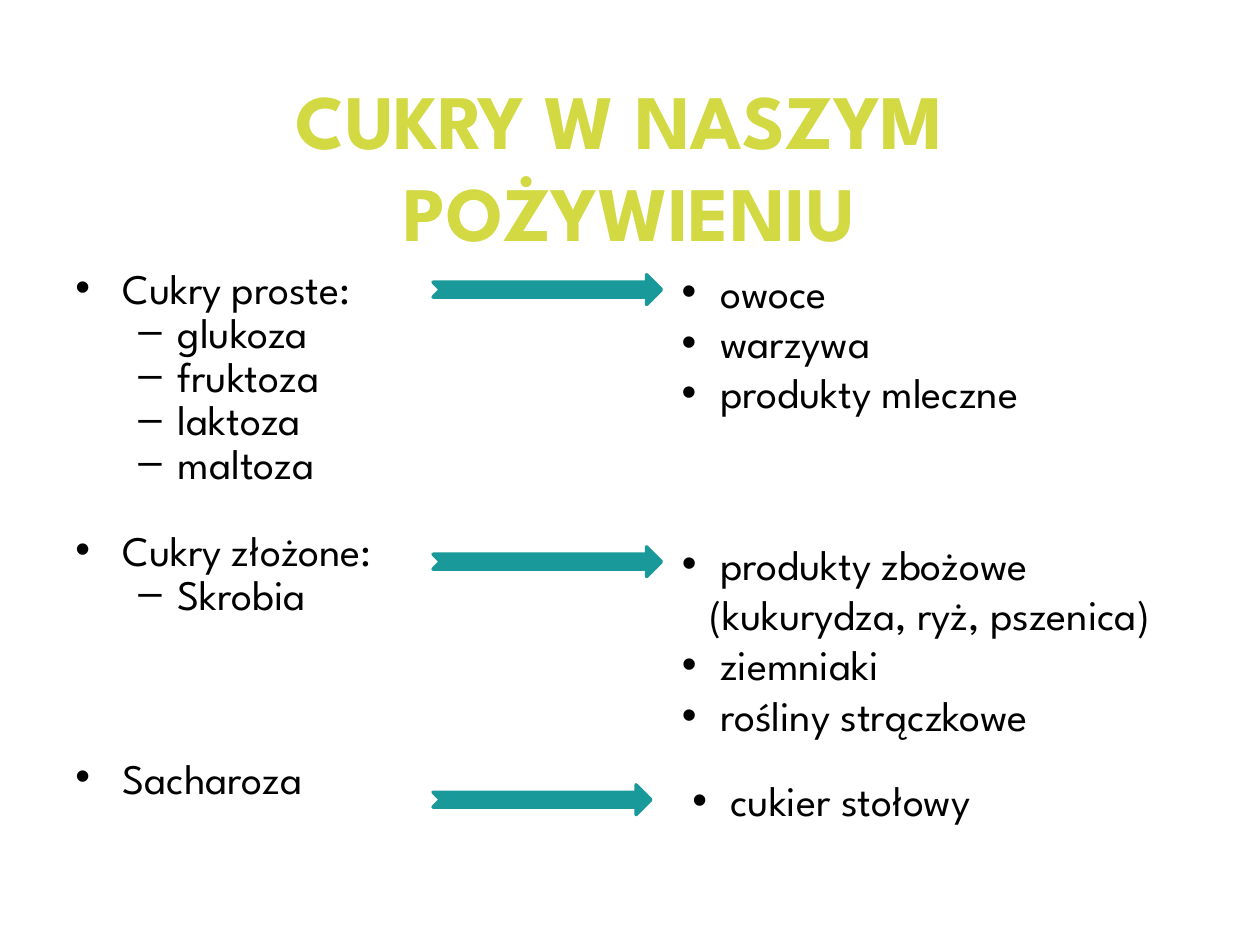
from lxml.etree import SubElement
from pptx import Presentation
from pptx.dml.color import RGBColor
from pptx.enum.shapes import MSO_SHAPE
from pptx.enum.text import MSO_ANCHOR, PP_ALIGN
from pptx.oxml.ns import qn
from pptx.util import Pt

LIME = RGBColor(0xD3, 0xD9, 0x43)
TEAL = RGBColor(0x19, 0x99, 0x99)
BLACK = RGBColor(0, 0, 0)
FONT = "League Spartan"

# Bullet levels: mark, text margin, hanging indent
MAIN = ("•", 27, 27)
SUB = ("–", 58.5, 22.5)
ITEM = ("•", 16, 16)


def add_mark(para, level):
    mark, left, hang = level
    props = para._p.get_or_add_pPr()
    props.set("marL", str(Pt(left)))
    props.set("indent", str(-Pt(hang)))
    SubElement(props, qn("a:buFont"), typeface="Arial")
    SubElement(props, qn("a:buChar"), char=mark)


def add_text(slide, box, rows, size=24, color=BLACK, bold=False,
             align=PP_ALIGN.LEFT, anchor=MSO_ANCHOR.TOP, lines=None):
    """Each row is (text, level, space before)."""
    frame = slide.shapes.add_textbox(*map(Pt, box)).text_frame
    frame.word_wrap = True
    frame.vertical_anchor = anchor
    for i, (text, level, gap) in enumerate(rows):
        para = frame.paragraphs[0] if i == 0 else frame.add_paragraph()
        para.text = text
        if level:
            add_mark(para, level)
        para.alignment = align
        para.space_before = Pt(gap)
        if lines:
            para.line_spacing = lines
        for run in para.runs:
            font = run.font
            font.name, font.size, font.bold = FONT, Pt(size), bold
            font.color.rgb = color


def add_list(slide, box, words):
    add_text(slide, box, [(" " + word, ITEM, 0) for word in words])


def add_arrow(slide, top, width):
    arrow = slide.shapes.add_shape(MSO_SHAPE.NOTCHED_RIGHT_ARROW, Pt(247.5),
                                   Pt(top), Pt(width), Pt(17))
    arrow.shadow.inherit = False
    arrow.fill.solid()
    arrow.fill.fore_color.rgb = TEAL
    arrow.line.color.rgb = TEAL
    arrow.line.width = Pt(2)


def main():
    deck = Presentation()
    deck.slide_width, deck.slide_height = Pt(720), Pt(540)
    slide = deck.slides.add_slide(deck.slide_layouts[6])

    # Title
    add_text(slide, (36, 49, 648, 90),
             [("CUKRY W NASZYM \vPOŻYWIENIU", None, 0)], size=44, color=LIME,
             bold=True, align=PP_ALIGN.CENTER, anchor=MSO_ANCHOR.MIDDLE)

    # Kinds of sugar
    sugars = [("Cukry proste:", MAIN, 0)]
    sugars += [(name, SUB, 4.8)
               for name in ("glukoza", "fruktoza", "laktoza", "maltoza")]
    sugars += [("Cukry złożone:", MAIN, 29.8), ("Skrobia", SUB, 4.8),
               ("Sacharoza", MAIN, 85)]
    add_text(slide, (36, 154.5, 648, 356), sugars, lines=0.7)

    # Foods that hold them
    add_list(slide, (382.5, 148.5, 261, 94),
             ["owoce", "warzywa", "produkty mleczne"])
    add_list(slide, (382.5, 304, 323, 124),
             ["produkty zbożowe (kukurydza, ryż, pszenica)",
              "ziemniaki", "rośliny strączkowe"])
    add_list(slide, (388.5, 439, 255.5, 36), ["cukier stołowy"])

    # Arrows from sugar to food
    for top, width in ((157, 130.5), (312.5, 130.5), (448.5, 124.5)):
        add_arrow(slide, top, width)

    deck.save("out.pptx")


if __name__ == "__main__":
    main()
